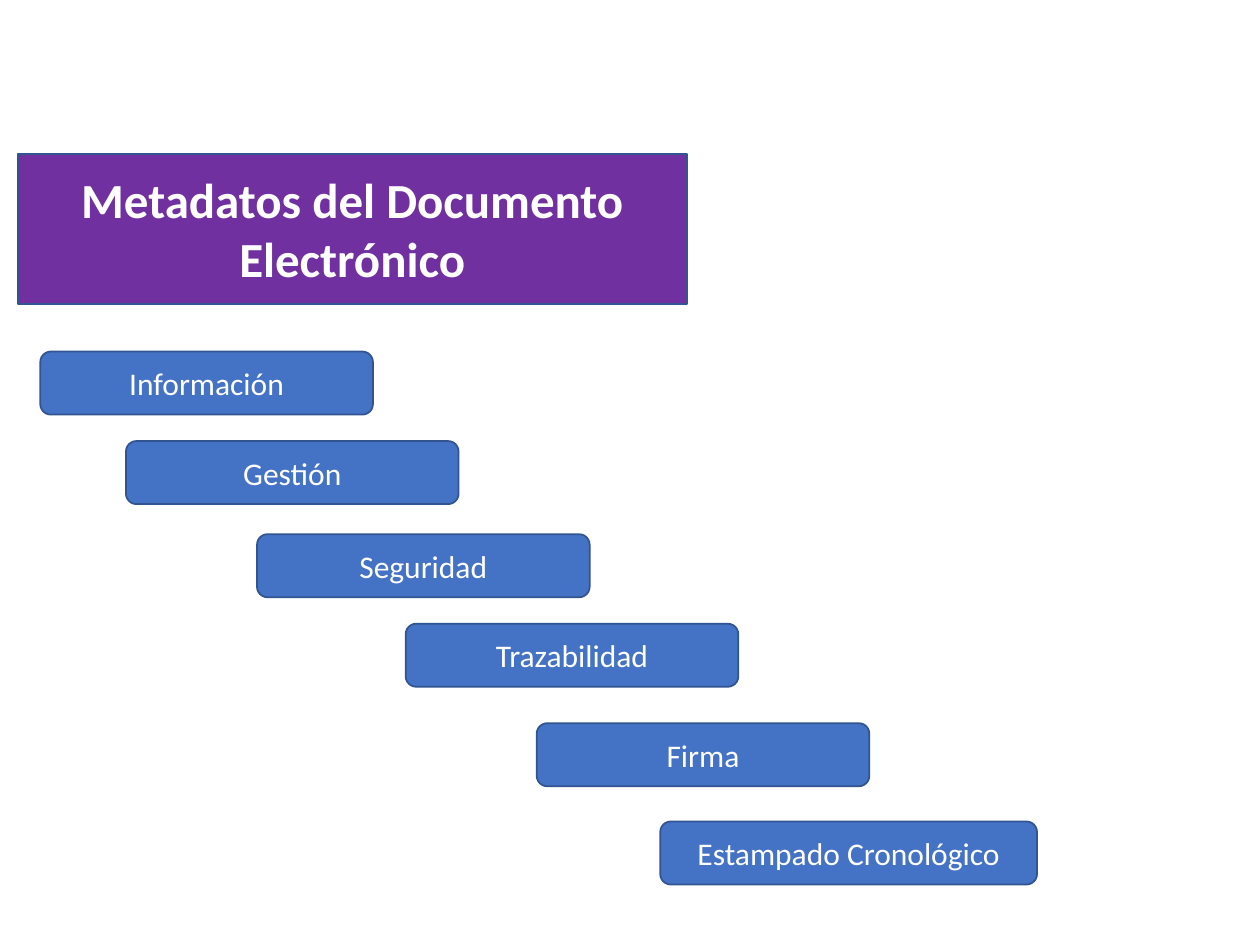
"""Build the slide of electronic document metadata as a descending staircase."""
from dataclasses import dataclass

from lxml import etree
from pptx import Presentation
from pptx.dml.color import RGBColor
from pptx.enum.shapes import MSO_SHAPE
from pptx.enum.text import MSO_ANCHOR, MSO_AUTO_SIZE, PP_ALIGN
from pptx.oxml.ns import qn
from pptx.util import Inches, Pt

ROUNDED = MSO_SHAPE.ROUNDED_RECTANGLE
MIDDLE = MSO_ANCHOR.MIDDLE
NO_AUTOFIT = MSO_AUTO_SIZE.NONE
CENTER = PP_ALIGN.CENTER

TITLE_ONLY = 5
WIDTH, HEIGHT = Inches(10), Inches(7.5)
PURPLE, BLUE, NAVY, WHITE = "7030A0", "4472C4", "325491", "FFFFFF"
TITLE_FONT = {"name": "Calibri", "size": Pt(28), "bold": True}
STEP_FONT = {"name": "Calibri", "size": Pt(18), "bold": False}
FRAME = {"word_wrap": True, "auto_size": NO_AUTOFIT, "vertical_anchor": MIDDLE}


@dataclass
class Box:
    """A labelled box, with lengths in percent of the slide's size."""

    text: str
    left: float
    top: float
    width: float = 26.4
    height: float = 6.67

    def bounds(self) -> dict:
        """Return the position and size in slide units."""
        return {
            "left": round(WIDTH * self.left / 100),
            "top": round(HEIGHT * self.top / 100),
            "width": round(WIDTH * self.width / 100),
            "height": round(HEIGHT * self.height / 100),
        }


TITLE = Box("Metadatos del Documento Electrónico", 1.4, 16.27, 53.1, 15.87)
STEPS = [
    Box("Información", 3.2, 37.2),
    Box("Gestión", 10, 46.67),
    Box("Seguridad", 20.4, 56.53),
    Box("Trazabilidad", 32.2, 66),
    Box("Firma", 42.6, 76.53),
    Box("Estampado Cronológico", 52.4, 86.93, 29.9),
]


def color(value: str) -> RGBColor:
    """Turn a hex string into a colour."""
    return RGBColor.from_string(value)


def apply(target, values: dict) -> None:
    """Set each named attribute on the target."""
    for name, value in values.items():
        setattr(target, name, value)


def format_box(s, text: str, fill: str, font: dict) -> None:
    """Fill and outline a shape and write its centred label."""
    s.fill.solid()
    s.fill.fore_color.rgb = color(fill)
    s.line.color.rgb = color(NAVY)
    s.line.width = Pt(1)
    tf = s.text_frame
    apply(tf, FRAME)
    p = tf.paragraphs[0]
    p.alignment = CENTER
    r = p.add_run()
    r.text = text
    apply(r.font, font)
    r.font.color.rgb = color(WHITE)


def draw_title(slide, box: Box) -> None:
    """Move the title placeholder and give it rounded corners."""
    s = slide.shapes.title
    apply(s, box.bounds())
    geometry = etree.SubElement(s.element.spPr, qn("a:prstGeom"), prst="roundRect")
    etree.SubElement(geometry, qn("a:avLst"))
    format_box(s, box.text, PURPLE, TITLE_FONT)


def draw_step(slide, box: Box) -> None:
    """Draw one step of the staircase."""
    s = slide.shapes.add_shape(ROUNDED, **box.bounds())
    s.shadow.inherit = False
    format_box(s, box.text, BLUE, STEP_FONT)


def main() -> None:
    """Build and save the presentation."""
    prs = Presentation()
    prs.slide_width, prs.slide_height = WIDTH, HEIGHT
    slide = prs.slides.add_slide(prs.slide_layouts[TITLE_ONLY])
    draw_title(slide, TITLE)
    for step in STEPS:
        draw_step(slide, step)
    prs.save("out.pptx")


if __name__ == "__main__":
    main()
